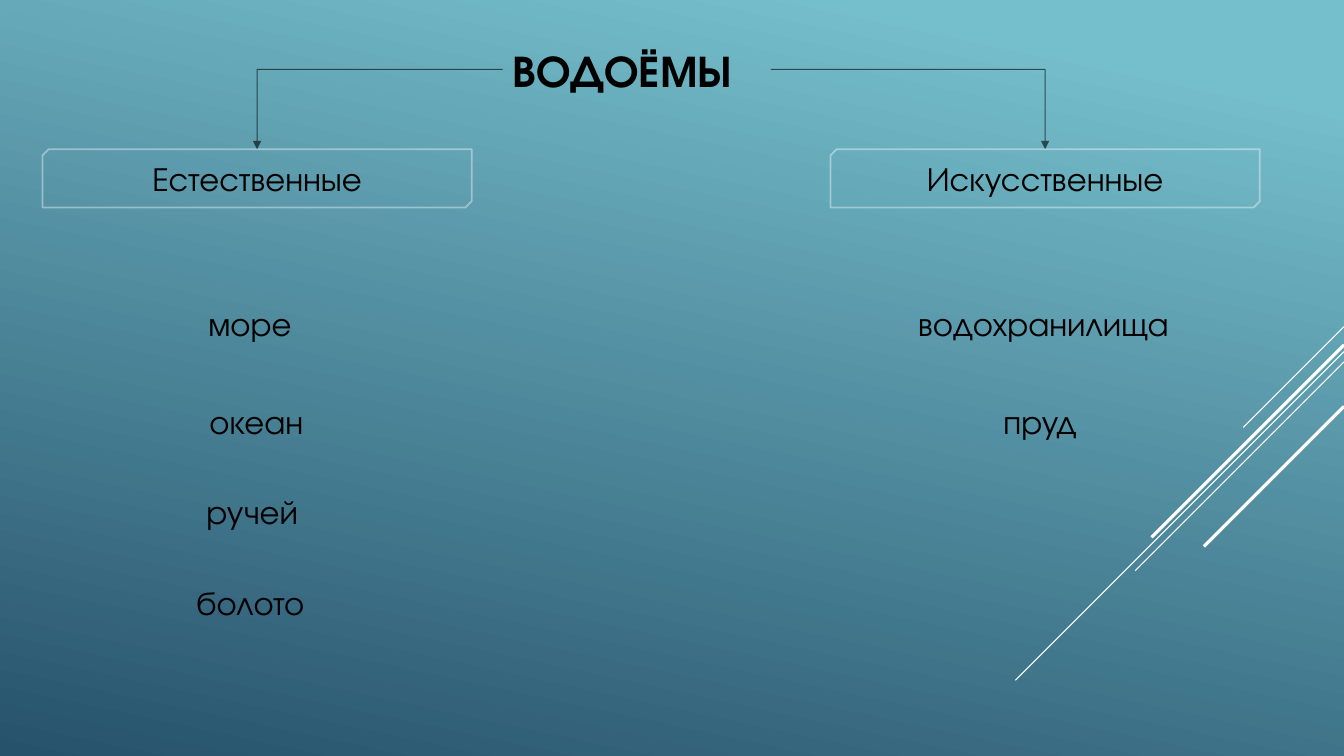
from lxml.etree import SubElement
from pptx import Presentation
from pptx.dml.color import RGBColor
from pptx.enum.shapes import MSO_CONNECTOR, MSO_SHAPE
from pptx.enum.text import MSO_ANCHOR, MSO_AUTO_SIZE, PP_ALIGN
from pptx.oxml.ns import qn
from pptx.util import Cm, Pt

WIDE, HIGH = 33.87, 19.05


def paint(color, value):
    color.rgb = RGBColor.from_string(value)


def write(frame, words, size=24, bold=False, align=PP_ALIGN.LEFT,
          anchor=MSO_ANCHOR.TOP, wrap=True, before=0):
    frame.word_wrap = wrap
    frame.vertical_anchor = anchor
    para = frame.paragraphs[0]
    para.alignment = align
    para.space_before = Pt(before)
    run = para.add_run()
    run.text = words
    run.font.name = "TeX Gyre Adventor"
    run.font.size = Pt(size)
    run.font.bold = bold
    paint(run.font.color, "000000")


class Deck:
    def __init__(self):
        self.show = Presentation()
        self.show.slide_width, self.show.slide_height = Cm(WIDE), Cm(HIGH)
        self.slide = self.show.slides.add_slide(self.show.slide_layouts[5])
        self.shapes = self.slide.shapes

    def back(self, stops, angle):
        fill = self.slide.background.fill
        fill.gradient()
        fill.gradient_angle = 360 - angle  # counter-clockwise
        for stop, (place, color) in zip(fill.gradient_stops, stops):
            stop.position = place
            paint(stop.color, color)

    def title(self, words, *area):
        head = self.shapes.title
        head.left, head.top, head.width, head.height = map(Cm, area)
        write(head.text_frame, words, size=32, bold=True,
              anchor=MSO_ANCHOR.BOTTOM)

    def stroke(self, line, color, width, alpha=100):
        paint(line.color, color)
        line.width = Pt(width)
        tint = line.fill._xPr.find(".//" + qn("a:srgbClr"))
        SubElement(tint, qn("a:alpha"), val=str(alpha * 1000))

    def line(self, *ends, color="FFFFFF", width=0.75, alpha=100):
        link = self.shapes.add_connector(MSO_CONNECTOR.STRAIGHT, *map(Cm, ends))
        self.stroke(link.line, color, width, alpha)
        SubElement(link._element.spPr, qn("a:effectLst"))
        return link

    def arrow(self, *ends):
        link = self.line(*ends, color="000000", alpha=60)
        props = link._element.spPr
        props.find(qn("a:prstGeom")).set("prst", "bentConnector2")
        SubElement(props.find(qn("a:ln")), qn("a:tailEnd"), type="triangle")

    def box(self, words, *area):
        box = self.shapes.add_shape(MSO_SHAPE.SNIP_2_DIAG_RECTANGLE,
                                    *map(Cm, area))
        box.adjustments[0], box.adjustments[1] = 0.108, 0
        box.shadow.inherit = False
        box.fill.background()
        self.stroke(box.line, "FFFFFF", 1.25, alpha=40)
        write(box.text_frame, words, align=PP_ALIGN.CENTER,
              anchor=MSO_ANCHOR.MIDDLE, before=5)

    def label(self, words, left, top, width):
        area = map(Cm, (left, top, width, 1.28))
        frame = self.shapes.add_textbox(*area).text_frame
        write(frame, words, wrap=False)
        frame.auto_size = MSO_AUTO_SIZE.SHAPE_TO_FIT_TEXT


def main():
    deck = Deck()
    deck.back([(0.1, "75BECB"), (1, "27526C")], angle=102)

    # Diagonal lines from the right edge: start height, run, width
    for top, run, width in [(8.23, 2.54, 0.75), (8.86, 8.28, 0.75),
                            (9.12, 5.26, 0.75), (8.69, 4.85, 2.25),
                            (10.24, 3.53, 2.25)]:
        deck.line(WIDE, top, WIDE - run, top + run, width=width)

    deck.title("ВОДОЁМЫ", 12.67, 0.91, 6.73, 1.65)

    # Two kinds: name, box left, arrow start, items as (word, left, width)
    kinds = [
        ("Естественные", 1.07, 12.67,
         [("море", 5, 2.97), ("океан", 5.03, 3.15),
          ("ручей", 4.95, 3.02), ("болото", 4.7, 3.56)]),
        ("Искусственные", 20.93, 19.43,
         [("водохранилища", 22.89, 7.59), ("пруд", 25.04, 2.59)]),
    ]
    rows = [7.52, 9.98, 12.24, 14.53]
    top, width = 3.76, 10.82
    for name, left, start, items in kinds:
        deck.box(name, left, top, width, 1.47)
        deck.arrow(start, 1.75, left + width / 2, top)
        for row, (word, side, span) in zip(rows, items):
            deck.label(word, side, row, span)

    deck.show.save("out.pptx")


if __name__ == "__main__":
    main()
